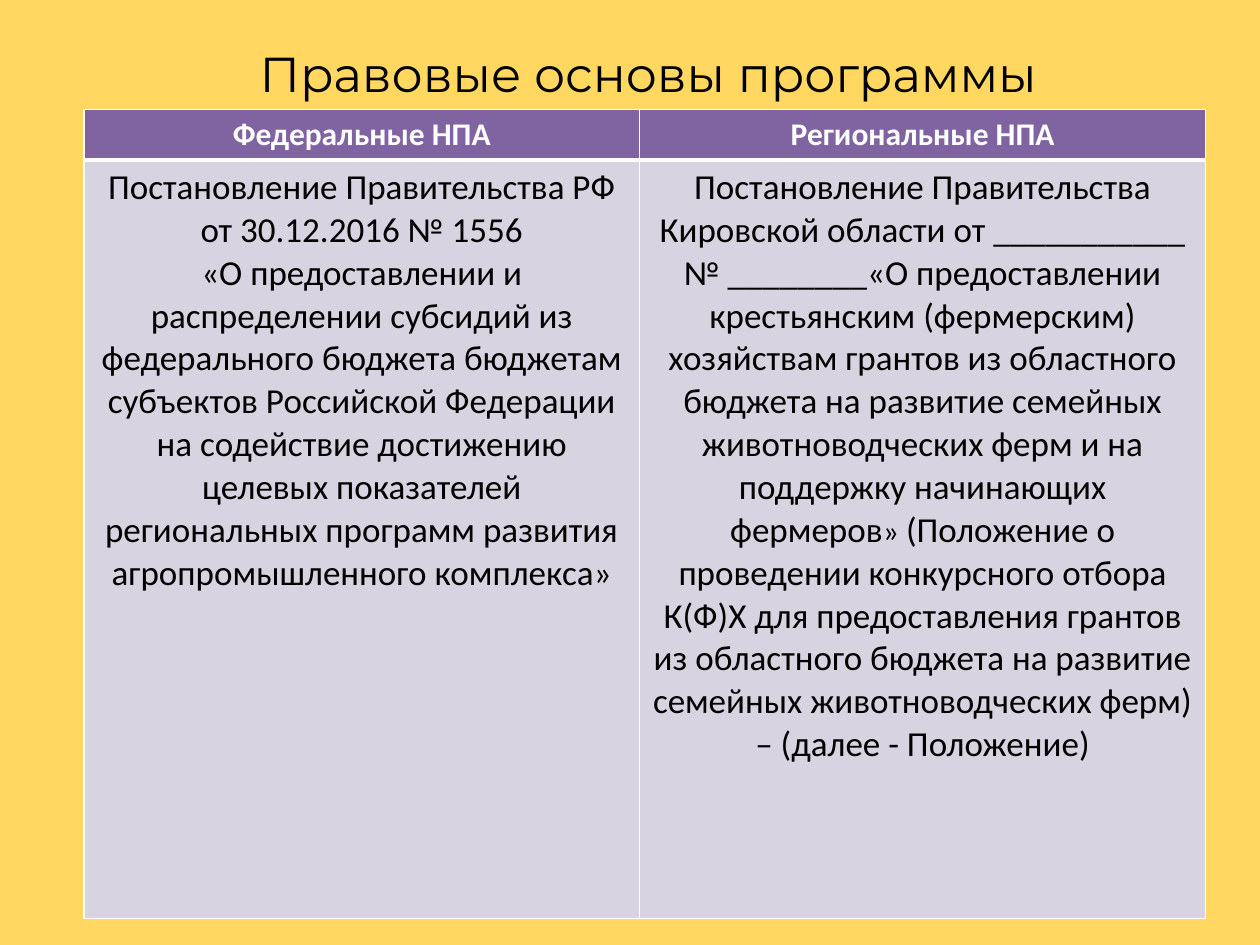
from lxml.etree import SubElement
from pptx import Presentation
from pptx.dml.color import RGBColor as RGB
from pptx.enum.text import MSO_ANCHOR as ANCHOR, MSO_AUTO_SIZE as AUTO, PP_ALIGN as ALIGN
from pptx.oxml.ns import qn
from pptx.util import Pt

COLORS = {
    "background": "FFD761",
    "header": "8064A2",
    "body": "D8D3E0",
    "text": "000000",
    "white": "FFFFFF",
}
TITLE = "Правовые основы программы "
HEADERS = ["Федеральные НПА", "Региональные НПА"]
# Each cell is a list of paragraphs, each paragraph a list of (text, size) runs.
FEDERAL = [
    [("Постановление Правительства РФ от 30.12.2016 № 1556", 20)],
    [("«О предоставлении и распределении субсидий из федерального бюджета "
      "бюджетам субъектов Российской Федерации на содействие достижению "
      "целевых показателей региональных программ развития "
      "агропромышленного комплекса»", 20)],
]
REGIONAL = [
    [("Постановление Правительства Кировской области от ___________ "
      "№ ________«О предоставлении крестьянским (фермерским) хозяйствам "
      "грантов из областного бюджета на развитие семейных животноводческих "
      "ферм и на поддержку начинающих фермеров", 20),
     ("» ", 18),
     ("(Положение о проведении конкурсного отбора К(Ф)Х для предоставления "
      "грантов из областного бюджета на развитие семейных животноводческих "
      "ферм) – (далее - Положение)", 20)],
]


def color(name):
    return RGB.from_string(COLORS[name])


def add_run(p, text, size, font, color_name, bold=False):
    r = p.add_run()
    r.text = text
    r.font.size = Pt(size)
    r.font.name = font
    r.font.bold = bold
    r.font.color.rgb = color(color_name)


def place_title(s, x, y, w, h):
    sp = s.shapes.title
    sp.left, sp.top, sp.width, sp.height = Pt(x), Pt(y), Pt(w), Pt(h)
    tf = sp.text_frame
    tf.word_wrap = True
    tf.auto_size = AUTO.SHAPE_TO_FIT_TEXT
    tf.vertical_anchor = ANCHOR.TOP
    p = tf.paragraphs[0]
    p.alignment = ALIGN.CENTER
    add_run(p, TITLE, 28, "Montserrat", "text")


def set_borders(cell, **widths):
    """Draw white borders; widths in points by side, 1 where not given."""
    tc_pr = cell._tc.get_or_add_tcPr()
    for i, side in enumerate("LRTB"):
        width = Pt(widths.get(side, 1))
        ln = SubElement(tc_pr, qn(f"a:ln{side}"), w=str(int(width)))
        fill = SubElement(ln, qn("a:solidFill"))
        SubElement(fill, qn("a:srgbClr"), val=COLORS["white"])
        tc_pr.insert(i, ln)


def fill_cell(cell, paragraphs, fill, font_color, bold=False):
    cell.fill.solid()
    cell.fill.fore_color.rgb = color(fill)
    tf = cell.text_frame
    for i, runs in enumerate(paragraphs):
        p = tf.add_paragraph() if i else tf.paragraphs[0]
        p.alignment = ALIGN.CENTER
        for text, size in runs:
            add_run(p, text, size, "Calibri", font_color, bold)


def place_acts_table(s, x, y, w, h):
    header_h, federal_w = 27.5, 317.5
    table = s.shapes.add_table(2, 2, Pt(x), Pt(y), Pt(w), Pt(h)).table
    for col, width in zip(table.columns, (federal_w, w - federal_w)):
        col.width = Pt(width)
    for row, height in zip(table.rows, (header_h, h - header_h)):
        row.height = Pt(height)
    for c, (header, body) in enumerate(zip(HEADERS, (FEDERAL, REGIONAL))):
        top, bottom = table.cell(0, c), table.cell(1, c)
        fill_cell(top, [[(header, 18)]], "header", "white", bold=True)
        set_borders(top, B=3)
        fill_cell(bottom, body, "body", "text")
        set_borders(bottom, T=3)


def main():
    prs = Presentation()
    prs.slide_width, prs.slide_height = Pt(720), Pt(540)
    s = prs.slides.add_slide(prs.slide_layouts[5])
    s.background.fill.solid()
    s.background.fill.fore_color.rgb = color("background")
    place_title(s, 127.5, 21, 493, 41)
    place_acts_table(s, 48, 62.5, 641, 461)
    prs.save("out.pptx")


if __name__ == "__main__":
    main()
